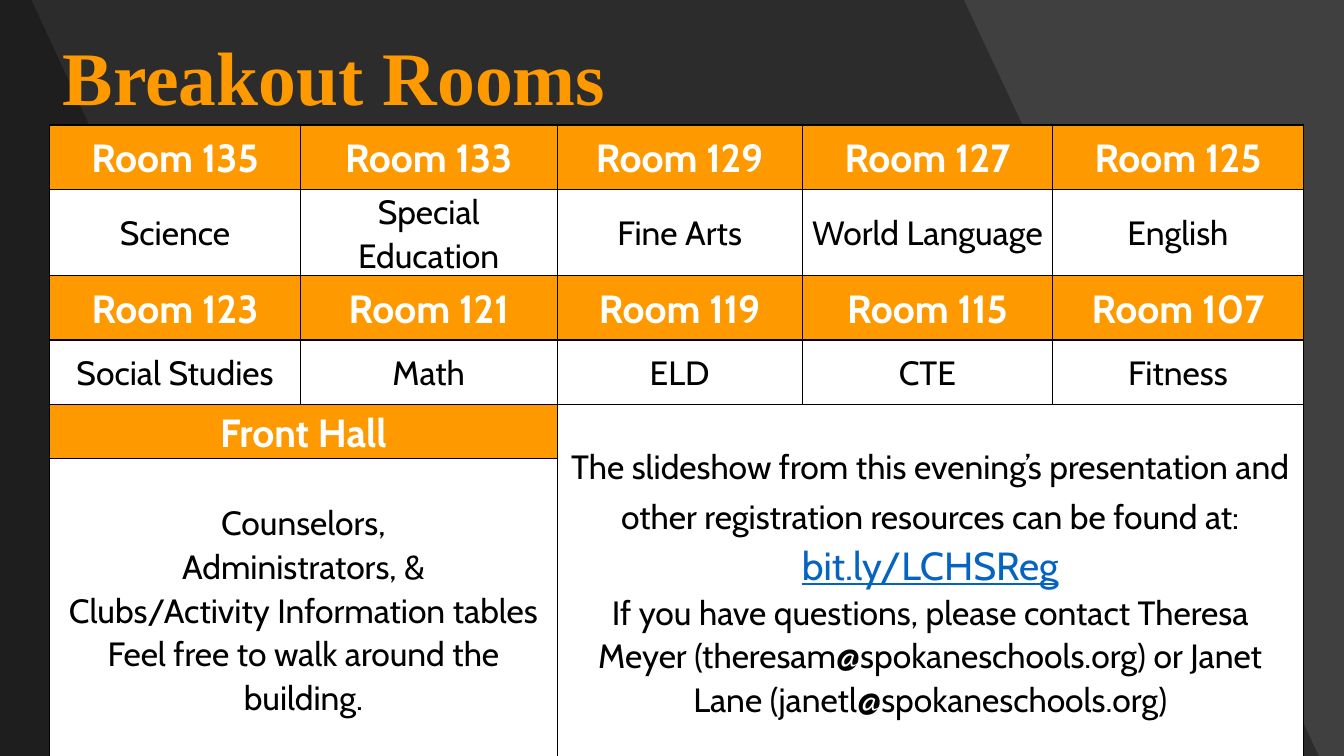
from dataclasses import dataclass

from lxml.etree import SubElement
from pptx import Presentation
from pptx.dml.color import RGBColor
from pptx.enum.shapes import MSO_SHAPE
from pptx.enum.text import MSO_ANCHOR, PP_ALIGN
from pptx.oxml.ns import qn
from pptx.util import Pt

COLORS = {
    "backdrop": "404040",
    "black": "000000",
    "white": "FFFFFF",
    "orange": "FF9900",
    "link": "0563C1",
}
W, H = 960, 540
COL_WIDTHS = [179, 183.5, 175, 179, 179]
ROW_HEIGHTS = [46, 46, 46, 46, 38.75, 216]


@dataclass(frozen=True)
class Band:
    top: float
    bottom: float


@dataclass(frozen=True)
class Room:
    name: str
    topic: str


BANDS = [Band(688.5, 942), Band(22.5, 272)]
ROOM_ROWS = [
    [
        Room("Room 135", "Science"),
        Room("Room 133", "Special Education"),
        Room("Room 129", "Fine Arts"),
        Room("Room 127", "World Language"),
        Room("Room 125", "English"),
    ],
    [
        Room("Room 123", "Social Studies"),
        Room("Room 121", "Math"),
        Room("Room 119", "ELD"),
        Room("Room 115", "CTE"),
        Room("Room 107", "Fitness"),
    ],
]
HALL_LINES = [
    "Counselors,",
    "Administrators, &",
    "Clubs/Activity Information tables",
    "Feel free to walk around the building.",
]
RESOURCES = (
    "The slideshow from this evening’s presentation "
    "and other registration resources can be found at:"
)
CONTACT = (
    "If you have questions, please contact Theresa Meyer "
    "(theresam@spokaneschools.org) or Janet Lane (janetl@spokaneschools.org)"
)


def rgb(name: str) -> RGBColor:
    return RGBColor.from_string(COLORS[name])


def add_text(p, text: str, *, size: float = 24, color: str = "black",
             font: str = "Cabin", bold: bool = False, underline: bool = False) -> None:
    r = p.add_run()
    r.text = text
    r.font.size = Pt(size)
    r.font.name = font
    r.font.bold = bold
    r.font.underline = underline
    r.font.color.rgb = rgb(color)


def add_paragraph(tf, first: bool):
    p = tf.paragraphs[0] if first else tf.add_paragraph()
    p.alignment = PP_ALIGN.CENTER
    p.line_spacing = 1.07
    return p


def fill_cell(cell, lines: list[str], header: bool = False) -> None:
    for i, line in enumerate(lines):
        p = add_paragraph(cell.text_frame, i == 0)
        if header:
            add_text(p, line, size=28, color="white", bold=True)
        else:
            add_text(p, line)
    if header:
        cell.fill.solid()
        cell.fill.fore_color.rgb = rgb("orange")


def style_cell(cell) -> None:
    cell.vertical_anchor = MSO_ANCHOR.MIDDLE
    cell.margin_left = cell.margin_right = Pt(5)
    cell.margin_top = cell.margin_bottom = Pt(0)
    tc_pr = cell._tc.get_or_add_tcPr()
    for side in ("lnL", "lnR", "lnT", "lnB"):
        ln = SubElement(tc_pr, qn(f"a:{side}"), w=str(Pt(1)))
        SubElement(SubElement(ln, qn("a:solidFill")), qn("a:srgbClr"), val=COLORS["black"])
    cell.fill.solid()
    cell.fill.fore_color.rgb = rgb("white")


def paint(sp, color: str) -> None:
    sp.shadow.inherit = False
    sp.fill.solid()
    sp.fill.fore_color.rgb = rgb(color)
    sp.line.fill.background()


def add_band(s, band: Band) -> None:
    builder = s.shapes.build_freeform(0, 0)
    corners = [(band.top, 0), (band.bottom, H), (0, H)]
    builder.add_line_segments([(Pt(x), Pt(y)) for x, y in corners], close=True)
    sp = builder.convert_to_shape()
    paint(sp, "black")
    color = sp._element.spPr.find(qn("a:solidFill")).find(qn("a:srgbClr"))
    SubElement(color, qn("a:alpha"), val="30000")


def add_title(s) -> None:
    tf = s.shapes.add_textbox(Pt(35.5), Pt(24), Pt(621), Pt(60)).text_frame
    tf.word_wrap = True
    tf.vertical_anchor = MSO_ANCHOR.MIDDLE
    tf.margin_left = tf.margin_right = tf.margin_top = tf.margin_bottom = Pt(9.5)
    add_text(tf.paragraphs[0], "Breakout Rooms", size=54, color="orange",
             font="Times New Roman", bold=True)


def add_rooms_table(s) -> None:
    frame = s.shapes.add_table(len(ROW_HEIGHTS), len(COL_WIDTHS), Pt(35.5), Pt(89.25),
                               Pt(sum(COL_WIDTHS)), Pt(sum(ROW_HEIGHTS)))
    table = frame.table
    table.first_row = table.horz_banding = False
    for col, width in zip(table.columns, COL_WIDTHS):
        col.width = Pt(width)
    for row, height in zip(table.rows, ROW_HEIGHTS):
        row.height = Pt(height)
    for cell in table.iter_cells():
        style_cell(cell)

    for i, rooms in enumerate(ROOM_ROWS):
        for j, room in enumerate(rooms):
            fill_cell(table.cell(2 * i, j), [room.name], header=True)
            fill_cell(table.cell(2 * i + 1, j), [room.topic])

    hall, hall_info, resources = table.cell(4, 0), table.cell(5, 0), table.cell(4, 2)
    hall.merge(table.cell(4, 1))
    hall_info.merge(table.cell(5, 1))
    resources.merge(table.cell(5, 4))
    fill_cell(hall, ["Front Hall"], header=True)
    fill_cell(hall_info, HALL_LINES)
    fill_cell(resources, [RESOURCES, CONTACT])
    p = resources.text_frame.paragraphs[0]
    add_text(p, " ", size=28)
    add_text(p, "bit.ly/LCHSReg", size=28, color="link", underline=True)


def main() -> None:
    prs = Presentation()
    prs.slide_width, prs.slide_height = Pt(W), Pt(H)
    s = prs.slides.add_slide(prs.slide_layouts[6])
    backdrop = s.shapes.add_shape(MSO_SHAPE.RECTANGLE, Pt(0), Pt(0), Pt(W), Pt(H))
    paint(backdrop, "backdrop")
    for band in BANDS:
        add_band(s, band)
    add_title(s)
    add_rooms_table(s)
    prs.save("out.pptx")


if __name__ == "__main__":
    main()
